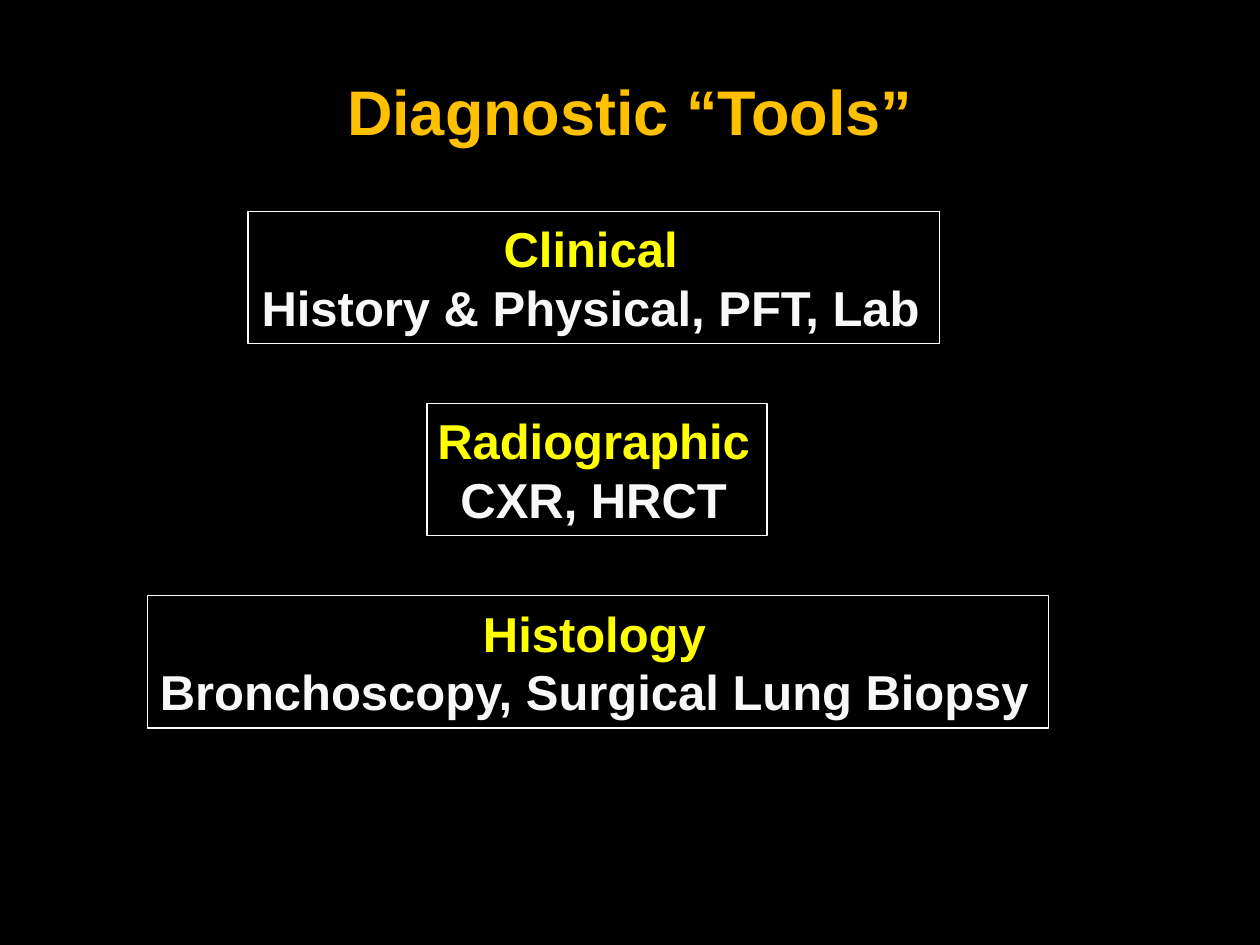
from dataclasses import dataclass

from pptx import Presentation
from pptx.dml.color import RGBColor
from pptx.enum.shapes import MSO_SHAPE
from pptx.enum.text import MSO_ANCHOR, PP_ALIGN
from pptx.util import Pt

RECT = MSO_SHAPE.RECTANGLE
MIDDLE = MSO_ANCHOR.MIDDLE
CENTER = PP_ALIGN.CENTER


@dataclass(frozen=True)
class Theme:
    font: str = "Arial"
    background: str = "000000"
    title: str = "FFC000"
    heading: str = "FFFF00"
    body: str = "F8F8F8"
    border: str = "FFFFFF"
    title_size: int = 36
    body_size: int = 28


class Deck:
    def __init__(self, prs, theme):
        self.theme = theme
        self.s = prs.slides.add_slide(prs.slide_layouts[6])
        fill = self.s.background.fill
        fill.solid()
        fill.fore_color.rgb = RGBColor.from_string(theme.background)

    def style(self, p, text, size, color):
        p.text = text
        p.alignment = CENTER
        p.font.name = self.theme.font
        p.font.size = Pt(size)
        p.font.bold = True
        p.font.color.rgb = RGBColor.from_string(color)

    def title(self, text, left, top, width, height):
        sp = self.s.shapes.add_textbox(Pt(left), Pt(top), Pt(width), Pt(height))
        tf = sp.text_frame
        tf.word_wrap = True
        tf.vertical_anchor = MIDDLE
        self.style(tf.paragraphs[0], text, self.theme.title_size, self.theme.title)

    def tool_box(self, heading, methods, left, top, width, height):
        sp = self.s.shapes.add_shape(RECT, Pt(left), Pt(top), Pt(width), Pt(height))
        sp.shadow.inherit = False
        sp.fill.background()
        sp.line.color.rgb = RGBColor.from_string(self.theme.border)
        sp.line.width = Pt(0.75)
        tf = sp.text_frame
        tf.word_wrap = False
        tf.vertical_anchor = MIDDLE
        tf.margin_right = Pt(11)
        self.style(tf.paragraphs[0], heading, self.theme.body_size, self.theme.heading)
        self.style(tf.add_paragraph(), methods, self.theme.body_size, self.theme.body)


def main():
    """Build the diagnostic tools slide."""
    prs = Presentation()
    prs.slide_width, prs.slide_height = Pt(720), Pt(540)
    deck = Deck(prs, Theme())
    tools = [
        ("Clinical", "History & Physical, PFT, Lab", 141.8, 395.3),
        ("Radiographic", "CXR, HRCT", 244, 194.4),
        ("Histology", "Bronchoscopy, Surgical Lung Biopsy", 84.2, 514.8),
    ]
    top, pitch, height = 120.8, 109.8, 75.6
    for i, (heading, methods, left, width) in enumerate(tools):
        deck.tool_box(heading, methods, left, top + i * pitch, width, height)
    deck.title("Diagnostic “Tools”", 54, 18, 612, 90)
    prs.save("out.pptx")


if __name__ == "__main__":
    main()
